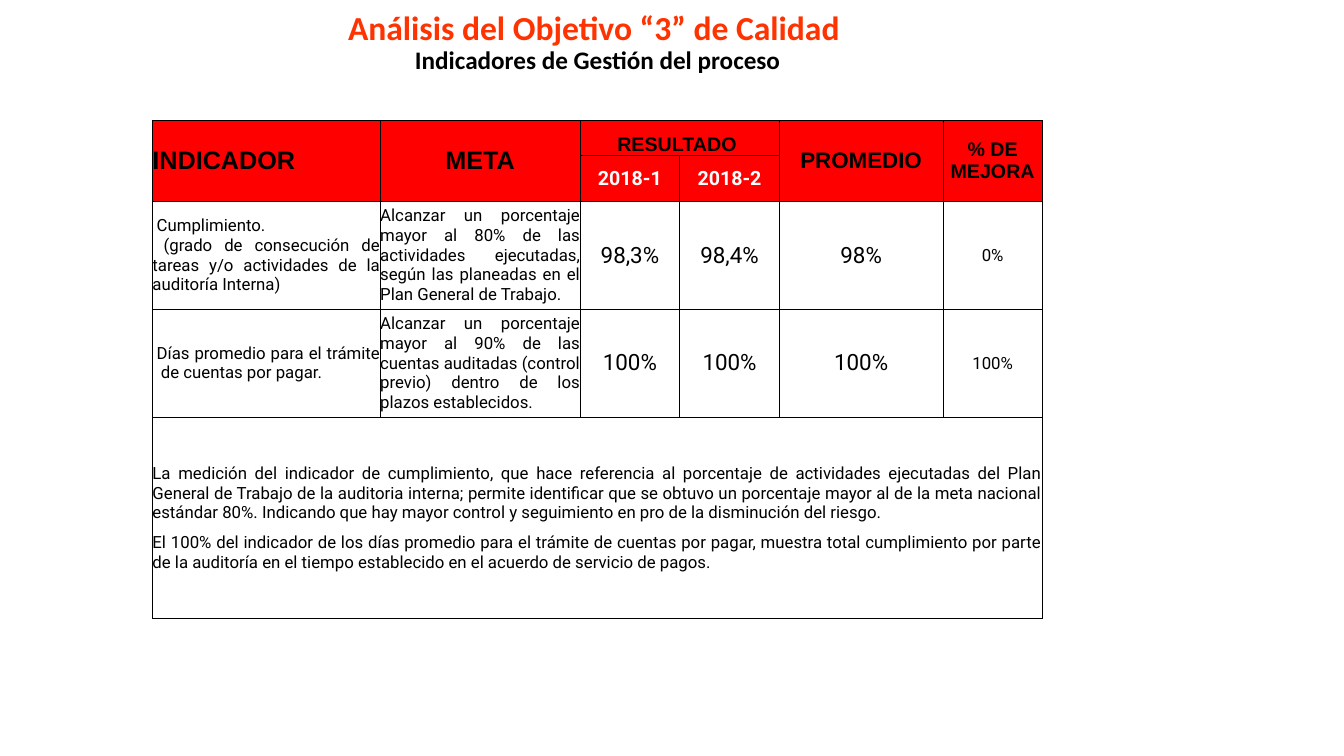
from dataclasses import dataclass

from lxml.etree import SubElement
from pptx import Presentation
from pptx.dml.color import RGBColor
from pptx.enum.text import MSO_ANCHOR as Anchor, MSO_AUTO_SIZE as AutoSize, PP_ALIGN as Align
from pptx.oxml.ns import qn
from pptx.util import Pt

BLACK, WHITE, RED, ORANGE = "000000", "FFFFFF", "FF0000", "FF3300"
COL_WIDTHS = (162.7, 142.8, 71.2, 71.2, 116.8, 71.1)
ROW_HEIGHTS = (25, 33, 77, 77, 144)


@dataclass(frozen=True)
class Para:
    text: str
    left: float = 0
    indent: float = 0
    before: float = 0


@dataclass(frozen=True)
class Cell:
    row: int
    col: int
    paras: tuple[Para, ...]
    size: float = 12
    align: Align = Align.CENTER
    font: str = "Roboto"
    color: str = BLACK
    bold: bool = False
    fill: str = WHITE
    anchor: Anchor = Anchor.MIDDLE
    rows: int = 1
    cols: int = 1
    heavy: str = ""


def rgb(value: str) -> RGBColor:
    return RGBColor.from_string(value)


def add_text(p, text: str, *, size: float, font: str, color: str = BLACK, bold: bool = False) -> None:
    r = p.add_run()
    r.text = text
    r.font.size = Pt(size)
    r.font.name = font
    r.font.bold = bold
    r.font.color.rgb = rgb(color)


def set_borders(cell, heavy: str) -> None:
    tc_pr = cell._tc.get_or_add_tcPr()
    for i, side in enumerate("LRTB"):
        width = Pt(1 if side == heavy else 0.5)
        ln = SubElement(tc_pr, qn(f"a:ln{side}"), w=str(width))
        SubElement(SubElement(ln, qn("a:solidFill")), qn("a:srgbClr"), val=BLACK)
        tc_pr.insert(i, ln)


def header(row: int, col: int, text: str, size: float, **fmt) -> Cell:
    return Cell(row, col, (Para(text),), size,
                **{"font": "Arial", "bold": True, "fill": RED, **fmt})


def body(row: int, col: int, *paras: Para, **fmt) -> Cell:
    return Cell(row, col, paras, align=Align.JUSTIFY, **fmt)


def results(row: int, values: tuple[str, ...], improvement: str) -> list[Cell]:
    cells = [Cell(row, col, (Para(v),), 16) for col, v in enumerate(values, 2)]
    return cells + [Cell(row, 5, (Para(improvement),), heavy="R")]


CELLS = [
    header(0, 0, "INDICADOR", 18, align=Align.LEFT, rows=2),
    header(0, 1, "META", 18, rows=2),
    header(0, 2, "RESULTADO ", 14, anchor=Anchor.BOTTOM, cols=2),
    header(0, 4, "PROMEDIO", 16, rows=2),
    header(0, 5, "% DE MEJORA", 14, rows=2, heavy="R"),
    header(1, 2, "2018-1", 14, font="Roboto", color=WHITE),
    header(1, 3, "2018-2", 14, font="Roboto", color=WHITE),
    body(2, 0, Para("Cumplimiento.", indent=3),
         Para("(grado de consecución de tareas y/o actividades de la auditoría Interna)", indent=8)),
    body(2, 1, Para("Alcanzar un porcentaje mayor al 80% de las actividades ejecutadas, "
                    "según las planeadas en el Plan General de Trabajo.")),
    *results(2, ("98,3%", "98,4%", "98%"), "0%"),
    body(3, 0, Para("Días promedio para el trámite de cuentas por pagar.", left=6, indent=-3)),
    body(3, 1, Para("Alcanzar un porcentaje mayor al 90% de las cuentas auditadas "
                    "(control previo) dentro de los plazos establecidos.")),
    *results(3, ("100%", "100%", "100%"), "100%"),
    body(4, 0,
         Para("La medición del indicador de cumplimiento, que hace referencia al porcentaje de "
              "actividades ejecutadas del Plan General de Trabajo de la auditoria interna; permite "
              "identificar que se obtuvo un porcentaje mayor al de la meta nacional estándar 80%. "
              "Indicando que hay mayor control y seguimiento en pro de la disminución del riesgo."),
         Para("El 100% del indicador de los días promedio para el trámite de cuentas por pagar, "
              "muestra total cumplimiento por parte de la auditoría en el tiempo establecido en el "
              "acuerdo de servicio de pagos.", before=7),
         cols=6, heavy="L"),
]


def draw_cell(table, c: Cell) -> None:
    cell = table.cell(c.row, c.col)
    last_row, last_col = c.row + c.rows - 1, c.col + c.cols - 1
    if c.rows * c.cols > 1:
        cell.merge(table.cell(last_row, last_col))
    for row in range(c.row, last_row + 1):
        for col in range(c.col, last_col + 1):
            part = table.cell(row, col)
            set_borders(part, c.heavy)
            part.fill.solid()
            part.fill.fore_color.rgb = rgb(c.fill)
    cell.margin_left = cell.margin_right = cell.margin_top = cell.margin_bottom = 0
    cell.vertical_anchor = c.anchor
    tf = cell.text_frame
    for i, para in enumerate(c.paras):
        p = tf.add_paragraph() if i else tf.paragraphs[0]
        p.alignment = c.align
        if para.before:
            p.space_before = Pt(para.before)
        if para.left or para.indent:
            p_pr = p._p.get_or_add_pPr()
            p_pr.set("marL", str(Pt(para.left)))
            p_pr.set("indent", str(Pt(para.indent)))
        add_text(p, para.text, size=c.size, font=c.font, color=c.color, bold=c.bold)


def draw_title(sp) -> None:
    sp.left, sp.top, sp.width, sp.height = Pt(36), Pt(7.2), Pt(782), Pt(49.7)
    tf = sp.text_frame
    tf.word_wrap = True
    tf.auto_size = AutoSize.NONE
    tf.vertical_anchor = Anchor.BOTTOM
    p = tf.paragraphs[0]
    p.alignment = Align.CENTER
    p.line_spacing = 0.9
    add_text(p, "Análisis del Objetivo “3” de Calidad ", size=24, font="Calibri", color=ORANGE, bold=True)
    p.add_line_break()
    add_text(p, "Indicadores de Gestión del proceso", size=18, font="Calibri", bold=True)


def draw_table(slide) -> None:
    frame = slide.shapes.add_table(len(ROW_HEIGHTS), len(COL_WIDTHS), Pt(108.9), Pt(86),
                                   Pt(sum(COL_WIDTHS)), Pt(sum(ROW_HEIGHTS)))
    table = frame.table
    table.first_row = table.horz_banding = False
    for column, width in zip(table.columns, COL_WIDTHS):
        column.width = Pt(width)
    for row, height in zip(table.rows, ROW_HEIGHTS):
        row.height = Pt(height)
    for c in CELLS:
        draw_cell(table, c)


def main() -> None:
    prs = Presentation()
    prs.slide_width, prs.slide_height = Pt(960), Pt(540)
    slide = prs.slides.add_slide(prs.slide_layouts[5])
    draw_title(slide.shapes.title)
    draw_table(slide)
    prs.save("out.pptx")


if __name__ == "__main__":
    main()
